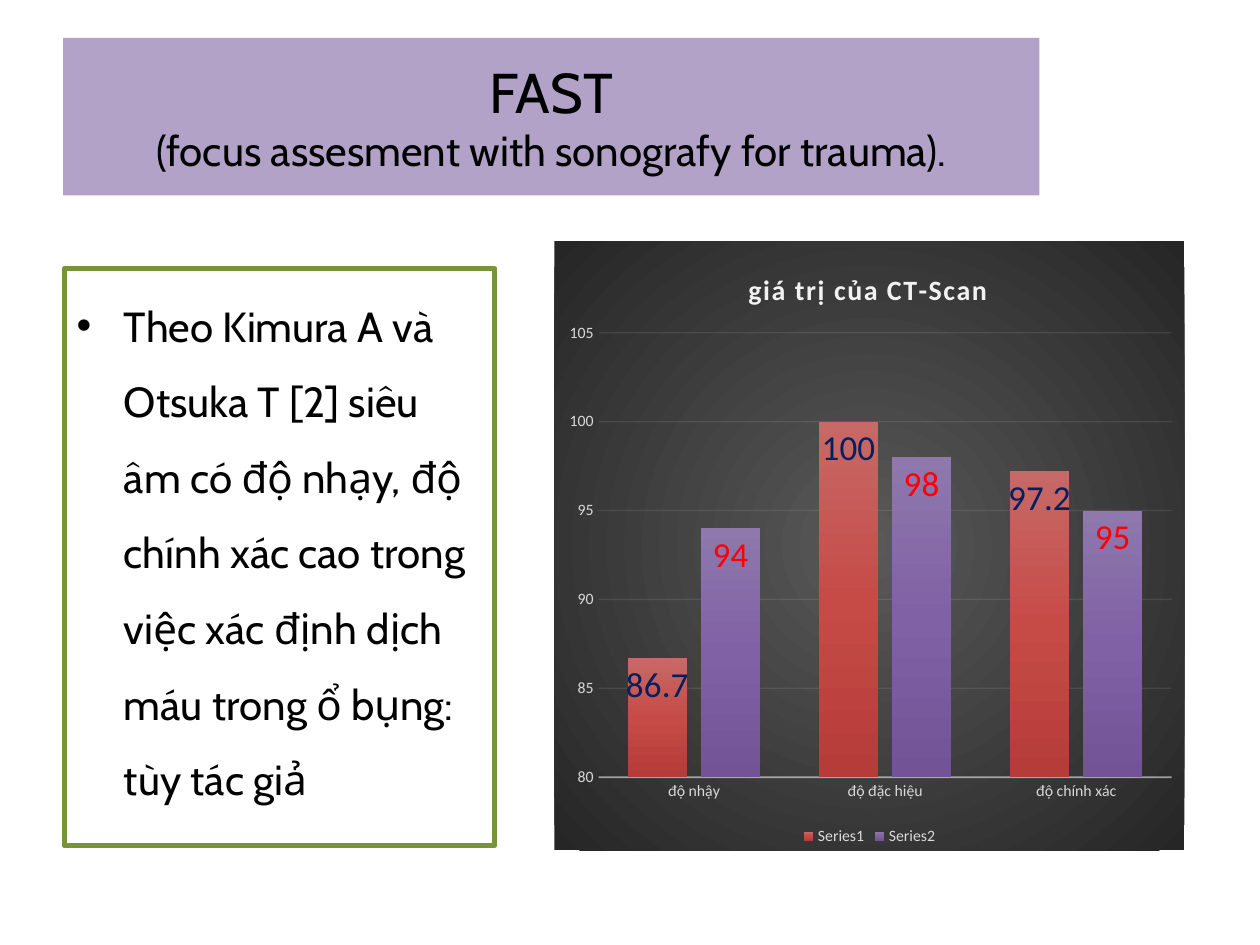
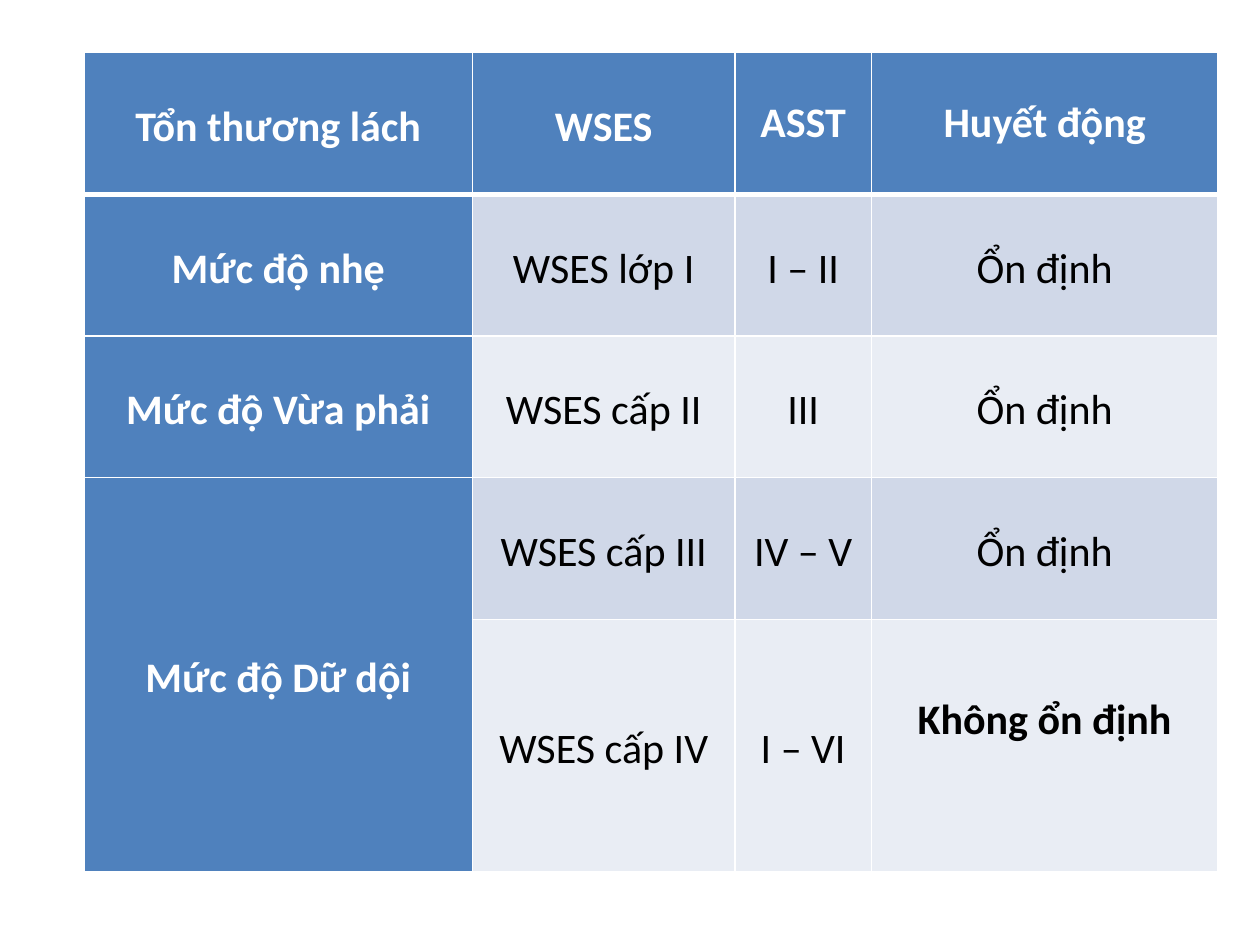
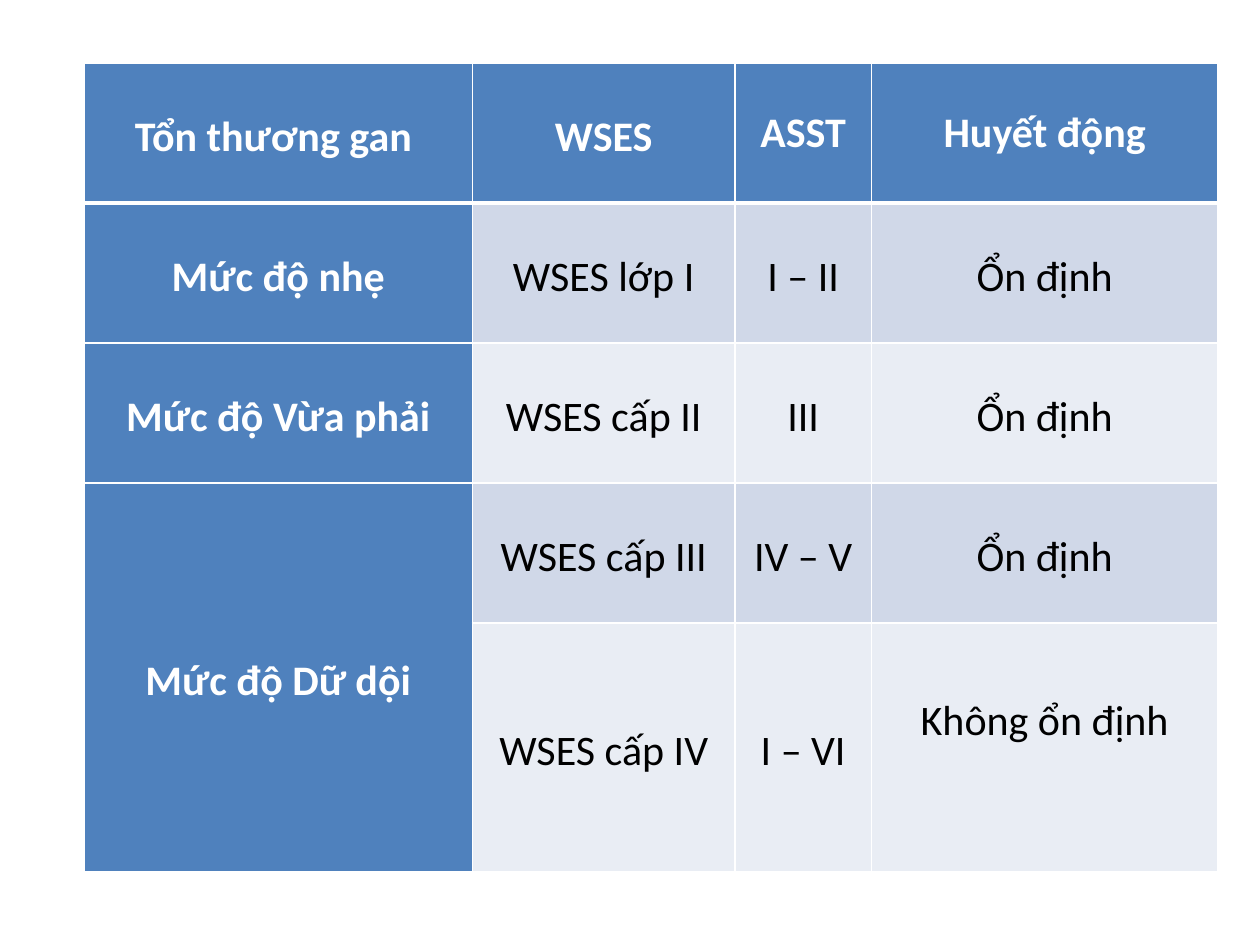
"""Build three slides on ultrasound and trauma grading: a chart and two tables."""
from dataclasses import dataclass

from pptx import Presentation
from pptx import util as u
from pptx.chart import data as chart_data
from pptx.dml.color import RGBColor
from pptx.enum import chart as charts
from pptx.enum import text
from pptx.oxml import parse_xml
from pptx.oxml.ns import nsdecls, qn


@dataclass(frozen=True)
class Theme:
    heading_font: str = "Cabin"
    data_font: str = "Calibri"
    title_size: int = 32
    body_size: int = 24
    label_size: int = 20
    chart_title_size: int = 16
    axis_size: int = 9
    black: str = "000000"
    white: str = "FFFFFF"
    title_band: str = "B3A2C7"
    box_line: str = "77933C"
    header: str = "4F81BD"
    odd_row: str = "D0D8E8"
    even_row: str = "E9EDF4"
    chart_light: str = "F2F2F2"
    chart_text: str = "D9D9D9"
    chart_back: tuple = ((0, "595959"), (100, "262626"))
    red_bar: tuple = ((0, "C76967"), (50, "C64B47"), (100, "B63C39"))
    purple_bar: tuple = ((0, "8E78AC"), (50, "8061A5"), (100, "715396"))
    red_bar_label: str = "002060"
    purple_bar_label: str = "FF0000"


theme = Theme()


def style_font(font, name, size, color, bold=False):
    font.name = name
    font.size = u.Pt(size)
    font.bold = bold
    font.color.rgb = RGBColor.from_string(color)


def gradient(stops, direction):
    stop_xml = "".join(
        f'<a:gs pos="{position * 1000}"><a:srgbClr val="{color}"/></a:gs>'
        for position, color in stops
    )
    return parse_xml(
        f'<a:gradFill {nsdecls("a")} rotWithShape="1">'
        f"<a:gsLst>{stop_xml}</a:gsLst>{direction}</a:gradFill>"
    )


presentation = Presentation()
presentation.slide_width = u.Pt(720)
presentation.slide_height = u.Pt(540)
blank_layout = presentation.slide_layouts[6]

slide = presentation.slides.add_slide(blank_layout)

body_box = slide.shapes.add_textbox(u.Pt(36.75), u.Pt(153.5), u.Pt(246), u.Pt(329.75))
body_box.line.color.rgb = RGBColor.from_string(theme.box_line)
body_box.line.width = u.Pt(3)
body_box.text_frame.word_wrap = True
paragraph = body_box.text_frame.paragraphs[0]
paragraph.text = (
    "Theo Kimura A và Otsuka T [2] siêu âm có độ nhạy, độ chính xác cao "
    "trong việc xác định dịch máu trong ổ bụng: tùy tác giả"
)
paragraph.line_spacing = 1.5
properties = paragraph._p.get_or_add_pPr()
properties.set("marL", str(u.Pt(27)))
properties.set("indent", str(u.Pt(-27)))
properties.append(parse_xml(f'<a:buFont {nsdecls("a")} typeface="Arial"/>'))
properties.append(parse_xml(f'<a:buChar {nsdecls("a")} char="•"/>'))
style_font(paragraph.font, theme.heading_font, theme.body_size, theme.black)

title_box = slide.shapes.add_textbox(u.Pt(36), u.Pt(21.6), u.Pt(558), u.Pt(90))
title_box.fill.solid()
title_box.fill.fore_color.rgb = RGBColor.from_string(theme.title_band)
title_box.text_frame.word_wrap = True
title_box.text_frame.vertical_anchor = text.MSO_ANCHOR.MIDDLE
paragraph = title_box.text_frame.paragraphs[0]
paragraph.alignment = text.PP_ALIGN.CENTER
title_run = paragraph.add_run()
title_run.text = "FAST"
paragraph.add_line_break()
subtitle_run = paragraph.add_run()
subtitle_run.text = "(focus assesment with sonografy for trauma)."
style_font(title_run.font, theme.heading_font, theme.title_size, theme.black)
style_font(subtitle_run.font, theme.heading_font, theme.body_size, theme.black)

values = chart_data.CategoryChartData()
values.categories = ["độ nhậy", "độ đặc hiệu", "độ chính xác"]
values.add_series("Series1", (86.7, 100, 97.2))
values.add_series("Series2", (94, 98, 95))
chart = slide.shapes.add_chart(
    charts.XL_CHART_TYPE.COLUMN_CLUSTERED,
    u.Pt(316.8), u.Pt(138), u.Pt(360), u.Pt(348), values,
).chart
style_font(chart.font, theme.data_font, 10, theme.black)

chart_title = chart.chart_title.text_frame.paragraphs[0]
title_run = chart_title.add_run()
title_run.text = "giá trị của CT-Scan"
style_font(title_run.font, theme.data_font, theme.chart_title_size, theme.chart_light, True)
title_run.font._element.set("spc", "100")

chart.has_legend = True
chart.legend.position = charts.XL_LEGEND_POSITION.BOTTOM
chart.legend.include_in_layout = False
style_font(chart.legend.font, theme.data_font, theme.axis_size, theme.chart_text)

value_axis, category_axis = chart.value_axis, chart.category_axis
value_axis.minimum_scale, value_axis.maximum_scale, value_axis.major_unit = 80, 105, 5
value_axis.has_major_gridlines = True
for axis in (value_axis, category_axis):
    axis.major_tick_mark = charts.XL_TICK_MARK.NONE
    axis.minor_tick_mark = charts.XL_TICK_MARK.NONE
    style_font(axis.tick_labels.font, theme.data_font, theme.axis_size, theme.chart_text)
value_axis.format.line.fill.background()
for line, width, opacity in (
    (category_axis.format.line, 1, 54),
    (value_axis.major_gridlines.format.line, 0.75, 10),
):
    line.color.rgb = RGBColor.from_string(theme.chart_light)
    line.width = u.Pt(width)
    line_color = line._get_or_add_ln().find(".//" + qn("a:srgbClr"))
    line_color.append(parse_xml(f'<a:alpha {nsdecls("a")} val="{opacity * 1000}"/>'))

plot = chart.plots[0]
plot.vary_by_categories = False
plot.gap_width = 100
plot.overlap = -24
for series, stops, label_color in zip(
    plot.series,
    (theme.red_bar, theme.purple_bar),
    (theme.red_bar_label, theme.purple_bar_label),
):
    series._element.get_or_add_spPr().append(
        gradient(stops, '<a:lin ang="5400000" scaled="0"/>')
    )
    labels = series.data_labels
    labels.show_value = True
    labels.position = charts.XL_LABEL_POSITION.INSIDE_END
    style_font(labels.font, theme.data_font, theme.label_size, label_color)

chart_root = chart._chartSpace.find(qn("c:chart"))
chart_area = parse_xml(f'<c:spPr {nsdecls("c", "a")}><a:ln><a:noFill/></a:ln></c:spPr>')
chart_area.insert(0, gradient(
    theme.chart_back,
    '<a:path path="circle"><a:fillToRect l="50000" t="50000" r="50000" b="50000"/></a:path>',
))
chart_root.addnext(chart_area)

for tag, index, target, position in (
    ("c:title", 1, "", {"x": 0.3, "y": 0.04}),
    ("c:plotArea", 0, '<c:layoutTarget val="inner"/>',
     {"x": 0.07, "y": 0.15, "w": 0.91, "h": 0.73}),
):
    element = chart_root.find(qn(tag))
    for automatic in element.findall(qn("c:layout")):
        element.remove(automatic)
    modes = "".join(f'<c:{key}Mode val="edge"/>' for key in "xy")
    sizes = "".join(f'<c:{key} val="{value}"/>' for key, value in position.items())
    element.insert(index, parse_xml(
        f'<c:layout {nsdecls("c")}><c:manualLayout>{target}{modes}{sizes}'
        "</c:manualLayout></c:layout>"
    ))

column_widths = (222, 150, 78, 198)
grades = (
    ("Mức độ nhẹ", "WSES lớp I", "I – II", "Ổn định"),
    ("Mức độ Vừa phải", "WSES cấp II", "III", "Ổn định"),
    ("Mức độ Dữ dội", "WSES cấp III", "IV – V", "Ổn định"),
    ("", "WSES cấp IV", "I – VI", "Không ổn định"),
)
last_row = len(grades)

for organ_heading, top, row_height, last_height, unstable_bold in (
    ("Tổn thương lách", 30, 81, 144, True),
    ("Tổn thương gan ", 36, 80, 142, False),
):
    slide = presentation.slides.add_slide(blank_layout)
    rows = ((organ_heading, "WSES", "ASST", "Huyết động"), *grades)
    heights = [row_height] * last_row + [last_height]
    table = slide.shapes.add_table(
        len(rows), len(column_widths),
        u.Pt(48), u.Pt(top), u.Pt(sum(column_widths)), u.Pt(sum(heights)),
    ).table
    table.horz_banding = False
    for column, width in zip(table.columns, column_widths):
        column.width = u.Pt(width)
    for row, height in zip(table.rows, heights):
        row.height = u.Pt(height)
    table.cell(last_row - 1, 0).merge(table.cell(last_row, 0))

    for row_index, row_texts in enumerate(rows):
        for column_index, cell_text in enumerate(row_texts):
            cell = table.cell(row_index, column_index)
            is_header = row_index == 0 or column_index == 0
            is_unstable = row_index == last_row and column_index == 3
            band = theme.odd_row if row_index % 2 else theme.even_row
            cell.fill.solid()
            cell.fill.fore_color.rgb = RGBColor.from_string(theme.header if is_header else band)
            cell.vertical_anchor = text.MSO_ANCHOR.MIDDLE
            cell.margin_left = cell.margin_right = cell.margin_top = u.Pt(4.5)
            cell.margin_bottom = u.Pt(38 if is_unstable else 4.5)

            widths = {
                "L": 1, "R": 1,
                "T": 3 if row_index == 1 else 1,
                "B": 3 if row_index == 0 else 1,
            }
            for order, (side, width) in enumerate(widths.items()):
                cell._tc.get_or_add_tcPr().insert(order, parse_xml(
                    f'<a:ln{side} {nsdecls("a")} w="{u.Pt(width)}"><a:solidFill>'
                    f'<a:srgbClr val="{theme.white}"/></a:solidFill></a:ln{side}>'
                ))

            if cell.is_spanned:
                continue
            paragraph = cell.text_frame.paragraphs[0]
            paragraph.text = cell_text
            paragraph.alignment = text.PP_ALIGN.CENTER
            paragraph.line_spacing = 1.0 if row_index == 0 and column_index > 1 else 1.15
            style_font(
                paragraph.font, theme.data_font, theme.body_size,
                theme.white if is_header else theme.black,
                is_header or (is_unstable and unstable_bold),
            )

presentation.save("out.pptx")
